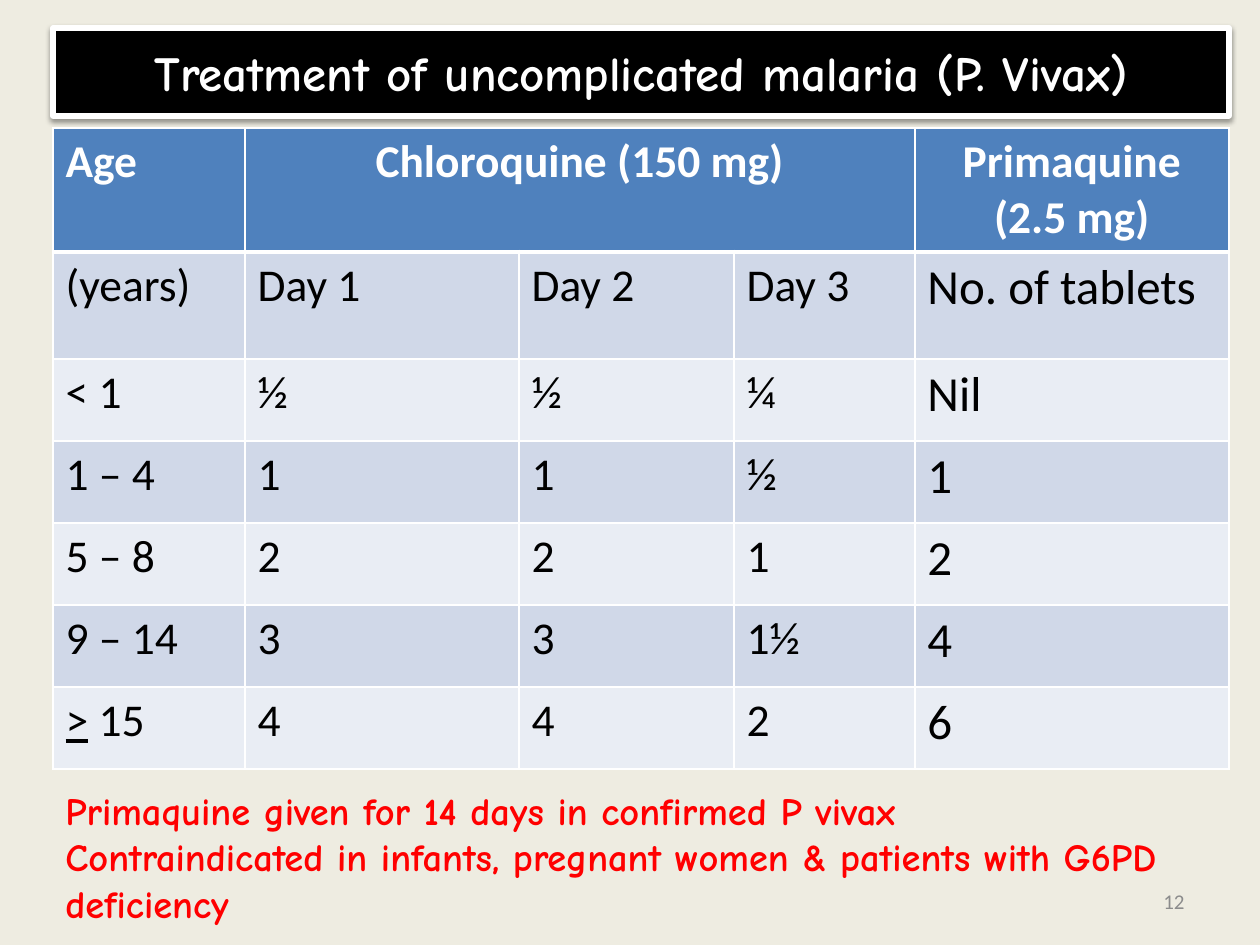
"""Build a slide with the dosing table for uncomplicated P. vivax malaria."""
from lxml.etree import SubElement
from pptx import Presentation
from pptx.dml.color import RGBColor
from pptx.enum.shapes import MSO_SHAPE as Shape
from pptx.enum.text import MSO_ANCHOR as Anchor, MSO_AUTO_SIZE as AutoSize, PP_ALIGN as Align
from pptx.oxml.ns import qn
from pptx.util import Emu, Pt

BLACK = RGBColor(0x00, 0x00, 0x00)
WHITE = RGBColor(0xFF, 0xFF, 0xFF)
RED = RGBColor(0xFF, 0x00, 0x00)
GRAY = RGBColor(0x8C, 0x8C, 0x8C)
CREAM = RGBColor(0xEE, 0xEC, 0xE1)
HEADER_BLUE = RGBColor(0x4F, 0x81, 0xBD)
BANDS = (RGBColor(0xE9, 0xED, 0xF4), RGBColor(0xD0, 0xD8, 0xE8))

HEADINGS = ("Age", "Chloroquine (150 mg)", "", "", "Primaquine (2.5 mg)")
DOSES = (
    ("(years)", "Day 1", "Day 2", "Day 3", "No. of tablets"),
    ("< 1", "½", "½", "¼", "Nil"),
    ("1 – 4", "1", "1", "½", "1"),
    ("5 – 8", "2", "2", "1", "2"),
    ("9 – 14", "3", "3", "1½", "4"),
    (((">", True), (" 15", False)), "4", "4", "2", "6"),
)
COLUMN_WIDTHS = (192, 274, 215, 181, 314)
ROW_HEIGHTS = (82, 107, 82, 82, 82, 82, 82)
NOTES = (
    "Primaquine given for 14 days in confirmed P vivax",
    "Contraindicated in infants, pregnant women & patients with G6PD deficiency",
)


def px(length):
    return Emu(round(length * 914400 / 126))


class DosingSlide:
    """Hold the text styles and the slide being filled."""

    TITLE = {"name": "Comic Neue", "size": Pt(28), "bold": True}
    HEADING = {"name": "Calibri", "size": Pt(26), "bold": True}
    DOSE = {"name": "Calibri", "size": Pt(26), "bold": False}
    TABLETS = {**DOSE, "size": Pt(28)}
    NOTE = {"name": "Comic Neue", "size": Pt(22), "bold": True}
    NUMBER = {"name": "Calibri", "size": Pt(12)}

    def __init__(self, deck):
        self.slide = deck.slides.add_slide(deck.slide_layouts[6])
        background = self.slide.background.fill
        background.solid()
        background.fore_color.rgb = CREAM

    def set_lines(self, frame, lines, style, color, align=Align.LEFT):
        for index, line in enumerate(lines):
            paragraph = frame.add_paragraph() if index else frame.paragraphs[0]
            paragraph.alignment = align
            parts = ((line, False),) if isinstance(line, str) else line
            for words, underline in parts:
                run = paragraph.add_run()
                run.text = words
                for key, value in {**style, "underline": underline}.items():
                    setattr(run.font, key, value)
                run.font.color.rgb = color

    def title(self, left, top, width, height, words):
        banner = self.slide.shapes.add_shape(
            Shape.RECTANGLE, *map(px, (left, top, width, height)))
        banner.fill.solid()
        banner.fill.fore_color.rgb = BLACK
        banner.line.color.rgb = WHITE
        banner.line.width = Pt(3)
        banner.shadow.inherit = False
        effects = banner.element.spPr.find(qn("a:effectLst"))
        shadow = SubElement(effects, qn("a:outerShdw"), blurRad=str(Pt(3.1)),
                            dist=str(Pt(1.6)), dir="5400000", rotWithShape="0")
        tint = SubElement(shadow, qn("a:srgbClr"), val=str(BLACK))
        SubElement(tint, qn("a:alpha"), val="38000")
        banner.text_frame.vertical_anchor = Anchor.MIDDLE
        self.set_lines(banner.text_frame, [words], self.TITLE, WHITE, Align.CENTER)

    def text(self, left, top, width, height, lines, style, color, align=Align.LEFT,
             anchor=Anchor.TOP, fit=AutoSize.NONE):
        box = self.slide.shapes.add_textbox(*map(px, (left, top, width, height)))
        frame = box.text_frame
        for key, value in {"word_wrap": True, "vertical_anchor": anchor,
                           "auto_size": fit}.items():
            setattr(frame, key, value)
        self.set_lines(frame, lines, style, color, align)

    def borders(self, cell, top, bottom):
        properties = cell._tc.get_or_add_tcPr()
        for side, points in {"L": 1, "R": 1, "T": top, "B": bottom}.items():
            edge = SubElement(properties, qn(f"a:ln{side}"), w=str(Pt(points)))
            SubElement(SubElement(edge, qn("a:solidFill")), qn("a:srgbClr"), val=str(WHITE))

    def table(self, left, top):
        table = self.slide.shapes.add_table(
            len(ROW_HEIGHTS), len(COLUMN_WIDTHS), px(left), px(top),
            px(sum(COLUMN_WIDTHS)), px(sum(ROW_HEIGHTS))).table
        for column, width in zip(table.columns, COLUMN_WIDTHS):
            column.width = px(width)
        for row, height in zip(table.rows, ROW_HEIGHTS):
            row.height = px(height)
        table.cell(0, 1).merge(table.cell(0, 3))
        last = len(COLUMN_WIDTHS) - 1
        for r, entries in enumerate((HEADINGS, *DOSES)):
            for c, entry in enumerate(entries):
                cell = table.cell(r, c)
                self.borders(cell, 3 if r == 1 else 1, 3 if r == 0 else 1)
                cell.fill.solid()
                cell.fill.fore_color.rgb = BANDS[r % 2] if r else HEADER_BLUE
                if not entry:
                    continue
                if r:
                    style = self.TABLETS if c == last else self.DOSE
                    self.set_lines(cell.text_frame, [entry], style, BLACK)
                else:
                    align = Align.CENTER if c else Align.LEFT
                    self.set_lines(cell.text_frame, [entry], self.HEADING, WHITE, align)


def main():
    deck = Presentation()
    deck.slide_width, deck.slide_height = px(1260), px(945)
    page = DosingSlide(deck)
    page.title(53, 28, 1176, 88, "Treatment of uncomplicated malaria (P. Vivax)")
    page.table(53, 128)
    page.text(53, 781, 1166, 152, NOTES, page.NOTE, RED, fit=AutoSize.SHAPE_TO_FIT_TEXT)
    page.text(903, 876, 294, 50, ["12"], page.NUMBER, GRAY, Align.RIGHT, Anchor.MIDDLE)
    deck.save("out.pptx")


if __name__ == "__main__":
    main()
